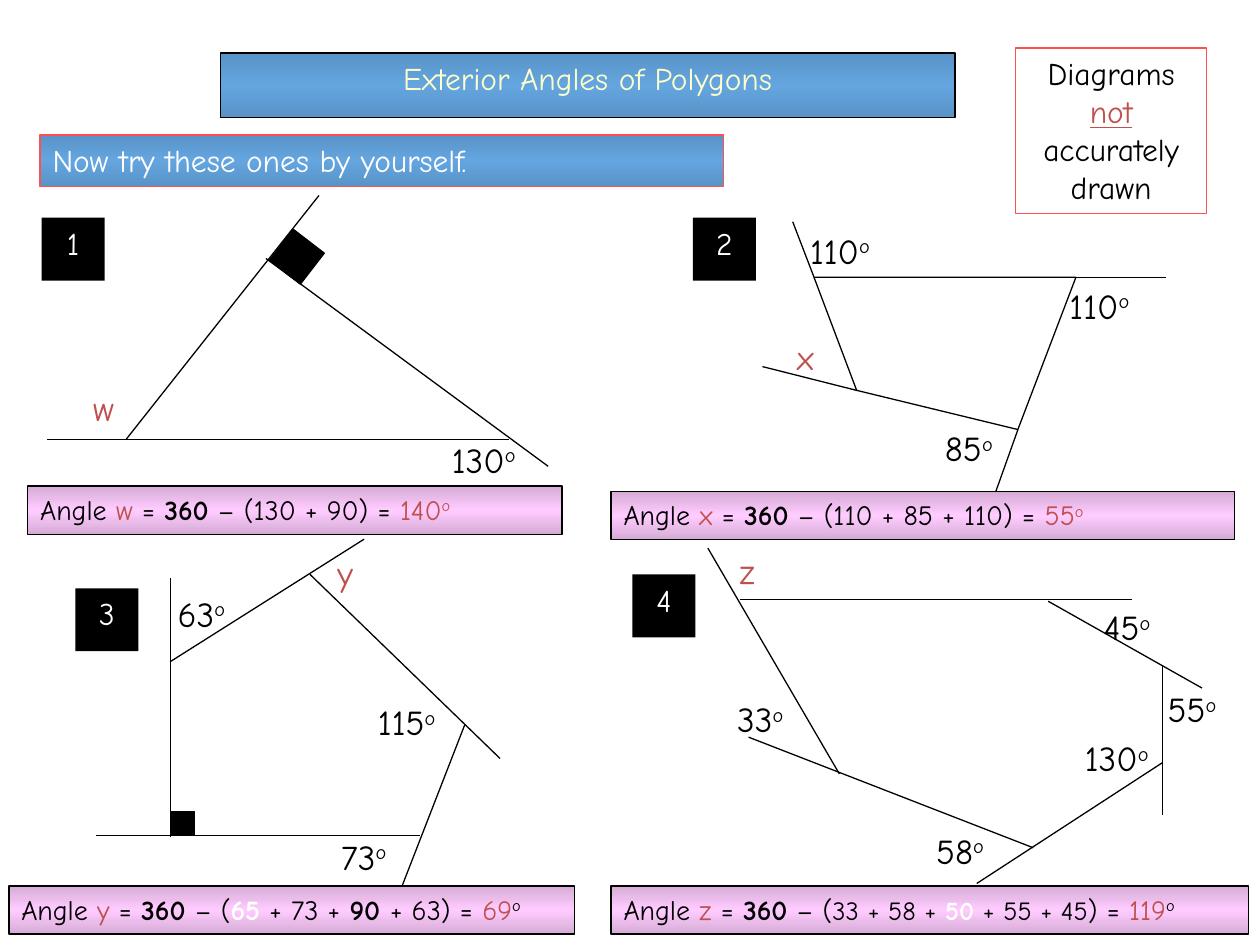
import copy

import pptx
import pptx.dml.color
import pptx.enum.shapes
import pptx.enum.text
import pptx.oxml.ns
import pptx.util
from pptx.util import Cm

FONT = "Comic Neue"
BLACK, WHITE, RED, CORAL = "000000", "FFFFFF", "C0504D", "FF5050"
BLUE_BAND = ("5993C7", "64A5E0")
PINK_BAND = ("D5ABD5", "FFCCFF")

TRIANGLE_LINES = [
    (10.26, 8.86, 0.94, 8.86), (11.05, 9.4, 5.36, 5.21), (2.54, 8.86, 6.43, 3.94),
]
QUADRILATERAL = [(16.41, 5.59), (21.69, 5.59), (20.52, 8.66), (17.27, 7.87)]
QUADRILATERAL_LINES = [
    (21.69, 5.59, 23.5, 5.59), (20.52, 8.66, 20.02, 10.06),
    (17.27, 7.87, 15.37, 7.39), (16.41, 5.59, 15.98, 4.47),
]
PENTAGON_LINES = [
    (8.46, 16.84, 1.93, 16.84), (3.43, 16.87, 3.43, 11.66), (3.43, 13.34, 7.34, 10.87),
    (6.25, 11.58, 10.08, 15.29), (9.37, 14.61, 7.95, 18.26),
]
HEXAGON_LINES = [
    (14.91, 12.09, 22.83, 12.09), (14.27, 11.05, 16.92, 15.6), (15.09, 14.86, 20.83, 17.09),
    (19.69, 17.81, 23.44, 15.37), (23.44, 16.43, 23.44, 13.41), (24.23, 13.87, 21.13, 12.12),
]
QUESTION_NUMBERS = [
    ("1", 0.84, 4.39), ("2", 13.97, 4.39), ("3", 1.52, 11.86), ("4", 12.75, 11.58),
]
KNOWN_ANGLES = [
    ("130", 8.86, 8.71), ("110", 16.08, 4.5), ("110", 21.31, 5.61), ("85", 18.8, 8.48),
    ("63", 3.33, 11.81), ("115", 7.37, 14), ("73", 6.63, 16.71),
    ("45", 22, 12.09), ("55", 23.29, 13.74), ("130", 21.62, 14.73),
    ("58", 18.62, 16.59), ("33", 14.61, 13.94),
]
UNKNOWN_ANGLES = [
    ("w", 1.63, 7.67), ("x", 15.82, 6.63), ("y", 6.55, 11), ("z", 14.66, 10.95),
]
BOLD, SMALL = {"bold": True}, {"size": 15}
HIDDEN_VALUE = {"bold": True, "color": WHITE}
ANSWERS = [
    ("w", (0.56, 9.8, 10.77), [(" – (130 + 90) = ", {})], "140", RED),
    ("x", (12.32, 9.91, 12.57), [(" – (110 + 85 + 110) = ", {})], "55", RED),
    ("y", (0.18, 17.86, 11.4),
     [(" – (", {}), ("65", HIDDEN_VALUE), (" + 73 + ", {}), ("90 ", BOLD), ("+ 63) = ", {})],
     "69", BLACK),
    ("z", (12.32, 17.86, 12.85),
     [(" – (", {}), ("33 + 58 + ", SMALL), ("50", {**HIDDEN_VALUE, **SMALL}),
      (" + 55 + 45", SMALL), (") = ", {})],
     "119", BLACK),
]


def rgb(value):
    """Return the colour for a hex string."""
    return pptx.dml.color.RGBColor.from_string(value)


def write(shape, pieces, size, color=BLACK, centered=False):
    """Write styled pieces of text into one paragraph."""
    text_frame = shape.text_frame
    text_frame.word_wrap = True
    text_frame.auto_size = pptx.enum.text.MSO_AUTO_SIZE.NONE
    text_frame.vertical_anchor = pptx.enum.text.MSO_ANCHOR.TOP
    paragraph = text_frame.paragraphs[0]
    alignment = pptx.enum.text.PP_ALIGN
    paragraph.alignment = alignment.CENTER if centered else alignment.LEFT
    for text, style in pieces:
        run = paragraph.add_run()
        run.text = text
        run.font.name = FONT
        run.font.size = pptx.util.Pt(style.get("size", size))
        run.font.bold = style.get("bold", False)
        run.font.underline = style.get("underline", False)
        run.font.color.rgb = rgb(style.get("color", color))
        if style.get("raised"):
            run._r.get_or_add_rPr().set("baseline", "30000")


def set_line(shape, color):
    """Give a shape a thin solid line."""
    shape.line.color.rgb = rgb(color)
    shape.line.width = pptx.util.Pt(0.75)


def fill_band(shape, colors):
    """Fill a shape with a vertical gradient, edge to middle to edge."""
    edge, middle = colors
    shape.fill.gradient()
    shape.fill.gradient_angle = 90
    stop_list = shape._element.spPr.find(".//" + pptx.oxml.ns.qn("a:gsLst"))
    stop_list.insert(1, copy.deepcopy(stop_list[0]))
    stops = zip(shape.fill.gradient_stops, (0, 0.5, 1), (edge, middle, edge))
    for stop, position, color in stops:
        stop.position = position
        stop.color.rgb = rgb(color)


def add_box(slide, left, top, width, height, fill=None, line=None):
    """Add a rectangle with a plain, banded or empty fill."""
    shape = slide.shapes.add_shape(
        pptx.enum.shapes.MSO_SHAPE.RECTANGLE, Cm(left), Cm(top), Cm(width), Cm(height))
    shape.shadow.inherit = False
    if fill is None:
        shape.fill.background()
    elif isinstance(fill, tuple):
        fill_band(shape, fill)
    else:
        shape.fill.solid()
        shape.fill.fore_color.rgb = rgb(fill)
    if line:
        set_line(shape, line)
    else:
        shape.line.fill.background()
    return shape


def add_line(slide, start_x, start_y, end_x, end_y):
    """Add one straight side of a diagram."""
    connector = slide.shapes.add_connector(
        pptx.enum.shapes.MSO_CONNECTOR.STRAIGHT,
        Cm(start_x), Cm(start_y), Cm(end_x), Cm(end_y))
    set_line(connector, BLACK)
    connector._element.spPr.append(pptx.oxml.parse_xml(
        "<a:effectLst %s/>" % pptx.oxml.ns.nsdecls("a")))


def add_polygon(slide, corners):
    """Add a closed outline through the corners."""
    points = [(Cm(x), Cm(y)) for x, y in corners]
    builder = slide.shapes.build_freeform(*points[0])
    builder.add_line_segments(points[1:], close=True)
    shape = builder.convert_to_shape()
    shape.shadow.inherit = False
    shape.fill.background()
    set_line(shape, BLACK)


def add_label(slide, left, top, width, pieces, color=BLACK):
    """Add an angle label."""
    label = slide.shapes.add_textbox(Cm(left), Cm(top), Cm(width), Cm(1.09))
    write(label, pieces, 20, color)


def add_title(slide, text):
    """Turn the title placeholder into the blue heading band."""
    title = slide.shapes.title
    title.left, title.top, title.width, title.height = Cm(4.44), Cm(1.07), Cm(14.81), Cm(1.3)
    fill_band(title, BLUE_BAND)
    set_line(title, BLACK)
    write(title, [(text, {})], 18, "FFFFCC", centered=True)


def add_answer(slide, letter, place, working, result, degree_color):
    """Add a pink band with the worked answer."""
    band = add_box(slide, *place, 0.97, PINK_BAND, BLACK)
    pieces = [("Angle ", {}), (letter, {"color": RED}), (" = ", {}), ("360", BOLD), *working,
              (result, {"color": RED}), ("o", {"color": degree_color, "raised": True})]
    write(band, pieces, 16)


def main():
    """Build the slide and save it."""
    presentation = pptx.Presentation()
    presentation.slide_width, presentation.slide_height = Cm(25.4), Cm(19.05)
    slide = presentation.slides.add_slide(presentation.slide_layouts[5])

    add_title(slide, "Exterior Angles of Polygons")
    warning = add_box(slide, 20.47, 0.97, 3.86, 3.33, line=CORAL)
    write(warning, [("Diagrams ", {}), ("not ", {"color": RED, "underline": True}),
                    ("accurately drawn", {})], 18, centered=True)
    instruction = add_box(slide, 0.81, 2.72, 13.77, 1.04, BLUE_BAND, CORAL)
    write(instruction, [("Now try these ones by yourself.", {})], 18, WHITE)

    add_polygon(slide, QUADRILATERAL)
    for line in TRIANGLE_LINES + QUADRILATERAL_LINES + PENTAGON_LINES + HEXAGON_LINES:
        add_line(slide, *line)
    add_box(slide, 3.45, 16.36, 0.48, 0.48, BLACK, BLACK)
    add_box(slide, 5.59, 4.78, 0.79, 0.79, BLACK, BLACK).rotation = 307.6

    for number, left, top in QUESTION_NUMBERS:
        square = add_box(slide, left, top, 1.27, 1.27, BLACK)
        write(square, [(number, {})], 18, WHITE, centered=True)
    for degrees, left, top in KNOWN_ANGLES:
        add_label(slide, left, top, 2.11, [(degrees, {}), ("o", {"raised": True})])
    for letter, left, top in UNKNOWN_ANGLES:
        add_label(slide, left, top, 1.22, [(letter, {})], RED)
    for answer in ANSWERS:
        add_answer(slide, *answer)

    presentation.save("out.pptx")


if __name__ == "__main__":
    main()
